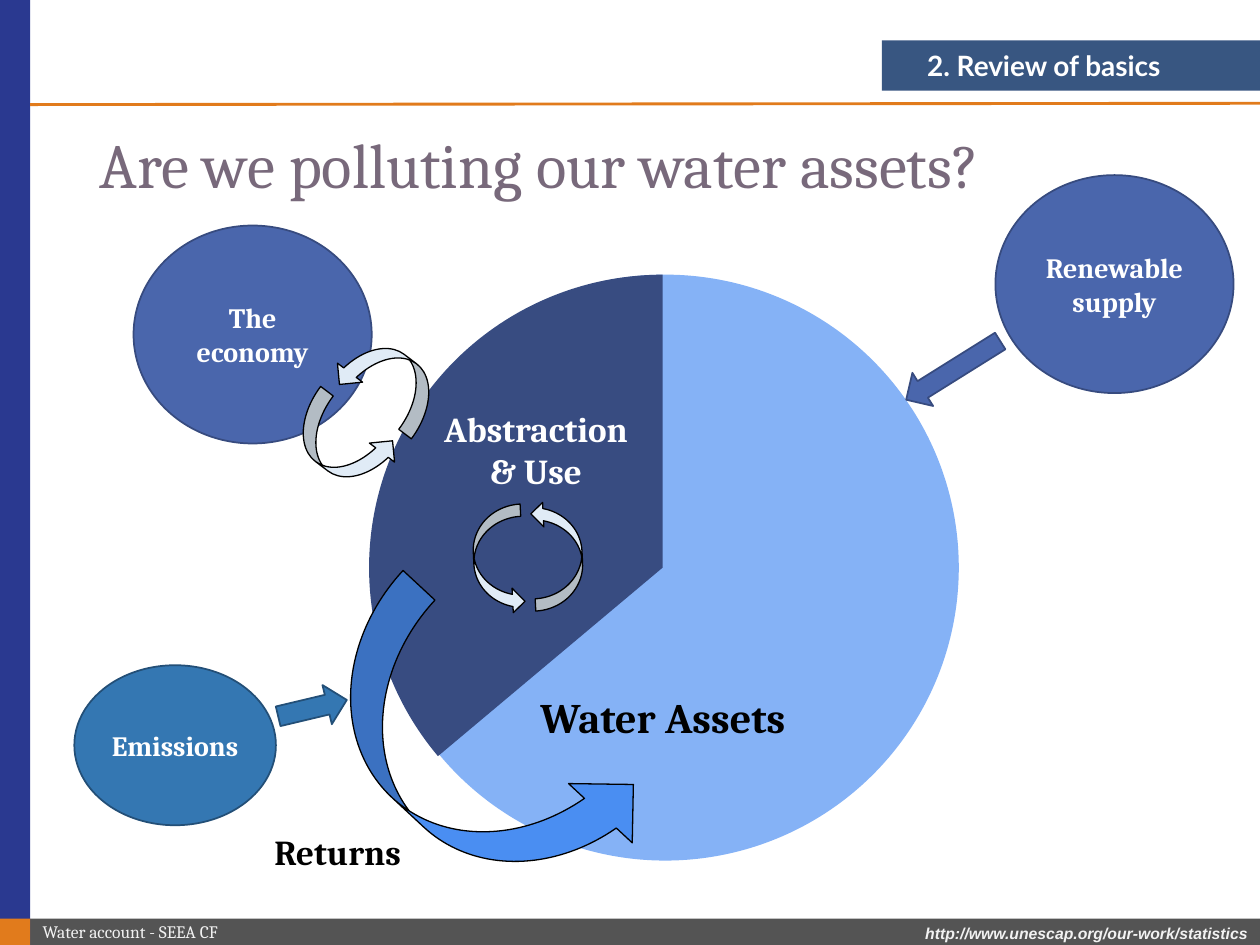
"""Build a slide on the pollution of water assets."""
from lxml import etree
from pptx import Presentation
from pptx.dml.color import RGBColor
from pptx.enum.shapes import MSO_CONNECTOR, MSO_SHAPE
from pptx.enum.text import MSO_ANCHOR, MSO_AUTO_SIZE, PP_ALIGN
from pptx.oxml.ns import qn
from pptx.util import Inches, Pt

RECTANGLE, OVAL, PIE = MSO_SHAPE.RECTANGLE, MSO_SHAPE.OVAL, MSO_SHAPE.PIE
CURVED_ARROW, DOWN_ARROW = MSO_SHAPE.CURVED_RIGHT_ARROW, MSO_SHAPE.DOWN_ARROW
STRAIGHT = MSO_CONNECTOR.STRAIGHT
LEFT, CENTER, RIGHT = PP_ALIGN.LEFT, PP_ALIGN.CENTER, PP_ALIGN.RIGHT
MIDDLE = MSO_ANCHOR.MIDDLE
FIXED_SIZE = MSO_AUTO_SIZE.NONE

WHITE = RGBColor(0xFF, 0xFF, 0xFF)
BLACK = RGBColor(0x00, 0x00, 0x00)
PALE = RGBColor(0xF2, 0xF2, 0xF2)
NAVY = RGBColor(0x07, 0x2C, 0x62)
GREY = RGBColor(0x54, 0x54, 0x54)
INDIGO = RGBColor(0x2A, 0x39, 0x90)
ORANGE = RGBColor(0xE1, 0x7B, 0x1C)
MAUVE = RGBColor(0x78, 0x69, 0x7B)
WATER = RGBColor(0x85, 0xB2, 0xF6)
USE = RGBColor(0x38, 0x4C, 0x81)
RETURN = RGBColor(0x4A, 0x8E, 0xF2)
CYCLE = RGBColor(0xE0, 0xEB, 0xF6)
BLUE = RGBColor(0x4A, 0x66, 0xAC)
BLUE_EDGE = RGBColor(0x37, 0x4B, 0x7F)
TEAL = RGBColor(0x34, 0x77, 0xB2)
TEAL_EDGE = RGBColor(0x23, 0x4F, 0x77)

presentation = Presentation()
presentation.slide_width = Inches(10)
presentation.slide_height = Inches(7.5)
COLUMN = presentation.slide_width // 100
ROW = presentation.slide_height // 75
BOX_UNITS = (COLUMN, ROW, COLUMN, ROW)

SIDEBAR = 2.4
FOOTER_TOP = 72.9
FOOTER_HEIGHT = 75 - FOOTER_TOP
CONTENT_WIDTH = 100 - SIDEBAR
BUBBLE_WIDTH, BUBBLE_HEIGHT = 18.9, 17.3
DISC_TOP, DISC_WIDTH, DISC_HEIGHT = 21.8, 46.6, 46.5

slide = presentation.slides.add_slide(presentation.slide_layouts[5])


def add_block(parent, kind, box, fill, edge=None, edge_width=1, rotation=0):
    position = [int(length * unit) for length, unit in zip(box, BOX_UNITS)]
    shape = parent.shapes.add_shape(kind, *position)
    shape.shadow.inherit = False
    shape.rotation = rotation
    shape.fill.solid()
    shape.fill.fore_color.rgb = fill
    if edge is None:
        shape.line.fill.background()
    else:
        shape.line.color.rgb = edge
        shape.line.width = Pt(edge_width)
    return shape


def write(shape, text, size, color, alignment=CENTER, font="Cambria", bold=True, italic=False):
    frame = shape.text_frame
    frame.word_wrap = True
    frame.auto_size = FIXED_SIZE
    frame.vertical_anchor = MIDDLE
    paragraph = frame.paragraphs[0]
    paragraph.alignment = alignment
    run = paragraph.add_run()
    run.text = text
    run.font.name = font
    run.font.size = Pt(size)
    run.font.bold = bold
    run.font.italic = italic
    run.font.color.rgb = color


title = slide.shapes.title
title.left, title.top = int(6.9 * COLUMN), int(8.9 * ROW)
title.width, title.height = int(86.2 * COLUMN), int(8.9 * ROW)
write(title, "Are we polluting our water assets?", 36, MAUVE, LEFT, bold=False)
title.text_frame.paragraphs[0].line_spacing = 0.9

banner = add_block(slide, RECTANGLE, (70, 3.2, 30, 4), NAVY)
banner_color = banner._element.spPr.find(".//" + qn("a:srgbClr"))
etree.SubElement(banner_color, qn("a:alpha"), val="80000")

frame_blocks = (
    ((SIDEBAR, FOOTER_TOP, CONTENT_WIDTH, FOOTER_HEIGHT), GREY),
    ((0, 0, SIDEBAR, 75), INDIGO),
    ((0, FOOTER_TOP, SIDEBAR, FOOTER_HEIGHT), ORANGE),
)
for box, fill in frame_blocks:
    add_block(slide, RECTANGLE, box, fill)

header_rule = slide.shapes.add_connector(
    STRAIGHT, int(SIDEBAR * COLUMN), int(8.3 * ROW), 100 * COLUMN, int(8.2 * ROW))
header_rule.line.color.rgb = ORANGE
header_rule.line.width = Pt(1.65)
etree.SubElement(header_rule._element.spPr, qn("a:effectLst"))

add_block(slide, OVAL, (29.5, DISC_TOP, DISC_WIDTH, DISC_HEIGHT), WATER)
use_wedge = add_block(slide, PIE, (29.3, DISC_TOP, DISC_WIDTH, DISC_HEIGHT), USE)
use_wedge.adjustments[0] = 84
use_wedge.adjustments[1] = 162
use_label = add_block(slide, RECTANGLE, (33.2, 31.8, 18.7, 7.7), USE)
write(use_label, "Abstraction & Use", 20, WHITE)

bubbles = (
    ("The economy", (10.6, 17.9, BUBBLE_WIDTH, BUBBLE_HEIGHT), 0.4, BLUE, BLUE_EDGE),
    ("Renewable supply", (79, 13.9, BUBBLE_WIDTH, BUBBLE_HEIGHT), 0.4, BLUE, BLUE_EDGE),
    ("Emissions", (5.9, 52.8, 16, 12.7), 0, TEAL, TEAL_EDGE),
)
for text, box, inset, fill, edge in bubbles:
    bubble = add_block(slide, OVAL, box, fill, edge)
    bubble.text_frame.margin_left = bubble.text_frame.margin_right = int(inset * COLUMN)
    write(bubble, text, 16, WHITE)

flows = (
    (CURVED_ARROW, (30.8, 45.8, 13.8, 28.4), RETURN, BLACK, 0.75, 312.9),
    (DOWN_ARROW, (74.1, 25, 3.1, 8.8), BLUE, BLUE_EDGE, 1, 58),
    (DOWN_ARROW, (23.2, 53.4, 3.2, 5.6), TEAL, TEAL_EDGE, 1, 256.6),
)
for flow in flows:
    add_block(slide, *flow)

cycles = (
    (((37.6, 40.1), (42.3, 39.7)), (3.9, 8.7), 357.1),
    (((24.8, 31), (28.3, 26.1)), (5, 8.4), 307.1),
)
for corners, arrow_size, rotation in cycles:
    cycle = slide.shapes.add_group_shape()
    for half_turns, corner in enumerate(corners):
        add_block(cycle, CURVED_ARROW, corner + arrow_size, CYCLE, BLACK, 0.75,
                  (rotation + 180 * half_turns) % 360)

labels = (
    ((37.5, 54.4, 30.2, 5), ("Water Assets", 24, BLACK)),
    ((20.8, 65.4, 25.7, 4.4), ("Returns", 20, BLACK, LEFT)),
    ((70, 3.3, 23.1, 3.7), ("2. Review of basics", 16, WHITE, RIGHT, "Lato")),
    ((SIDEBAR, FOOTER_TOP, 29.9, 2), ("Water account - SEEA CF", 10, PALE, LEFT, "Cambria", False)),
    ((62.6, 72.8, 37.4, 2.5),
     ("http://www.unescap.org/our-work/statistics", 9, PALE, RIGHT, "Arial", True, True)),
)
for box, wording in labels:
    position = [int(length * unit) for length, unit in zip(box, BOX_UNITS)]
    write(slide.shapes.add_textbox(*position), *wording)

presentation.save("out.pptx")
